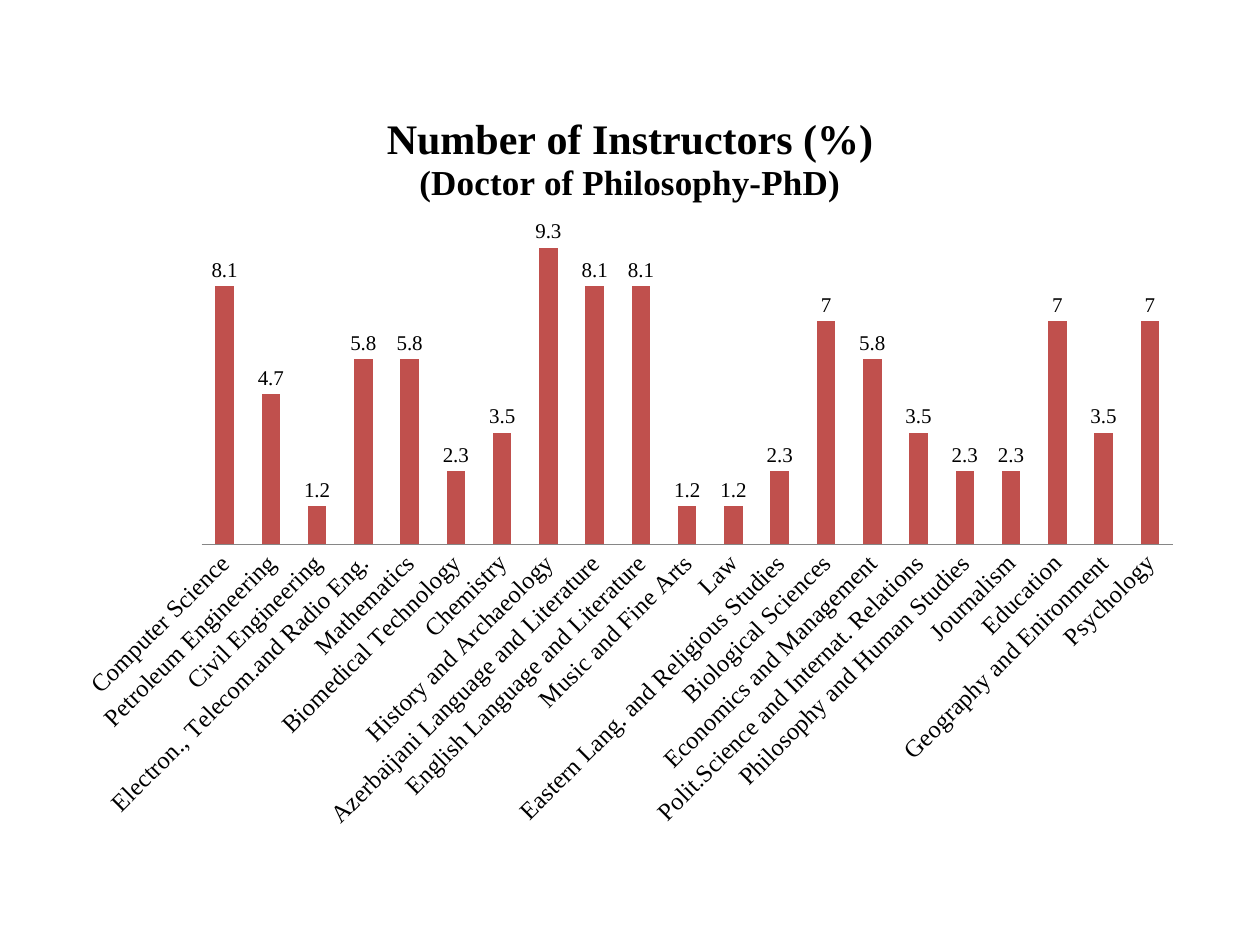
from lxml.etree import SubElement
from pptx import Presentation
from pptx.chart.data import CategoryChartData
from pptx.dml.color import RGBColor
from pptx.enum.chart import XL_CHART_TYPE as ChartType, XL_LABEL_POSITION as LabelPosition
from pptx.enum.chart import XL_TICK_MARK as TickMark
from pptx.oxml.ns import qn
from pptx.util import Inches, Pt

COLORS = {"bar": "C0504D", "text": "000000", "axis": "868686"}
SERIF = "Times New Roman"
TITLE_LINES = [("Number of Instructors (%)", 24), ("(Doctor of Philosophy-PhD)", 20)]
INSTRUCTORS = [
    ("Computer Science", 8.1),
    ("Petroleum Engineering", 4.7),
    ("Civil Engineering", 1.2),
    ("Electron., Telecom.and Radio Eng.", 5.8),
    ("Mathematics", 5.8),
    ("Biomedical Technology", 2.3),
    ("Chemistry", 3.5),
    ("History and Archaeology", 9.3),
    ("Azerbaijani Language and Literature", 8.1),
    ("English Language and Literature", 8.1),
    ("Music and Fine Arts", 1.2),
    ("Law", 1.2),
    ("Eastern Lang. and Religious Studies", 2.3),
    ("Biological Sciences", 7),
    ("Economics and Management", 5.8),
    ("Polit.Science and Internat. Relations", 3.5),
    ("Philosophy and Human Studies", 2.3),
    ("Journalism", 2.3),
    ("Education", 7),
    ("Geography and Enironment", 3.5),
    ("Psychology", 7),
]
CHART_BOX = (0.5, 0.7, 9, 6)
PLOT_BOX = (1.6, 1.79, 7.71, 2.53)


def color(key):
    return RGBColor.from_string(COLORS[key])


def style_font(font, size, name=SERIF, bold=False):
    for attribute, value in {"size": Pt(size), "name": name, "bold": bold}.items():
        setattr(font, attribute, value)
    font.color.rgb = color("text")


def place_plot(chart):
    """Fix the inner plot area as fractions of the chart frame."""
    left, top, width, height = CHART_BOX
    x, y, w, h = PLOT_BOX
    fractions = {"x": (x - left) / width, "y": (y - top) / height,
                 "w": w / width, "h": h / height}
    plot_area = chart.element.find(".//" + qn("c:plotArea"))
    layout = plot_area.find(qn("c:layout"))
    if layout is None:
        layout = SubElement(plot_area, qn("c:layout"))
        plot_area.insert(0, layout)
    manual = SubElement(layout, qn("c:manualLayout"))
    SubElement(manual, qn("c:layoutTarget")).set("val", "inner")
    for side in "xy":
        SubElement(manual, qn(f"c:{side}Mode")).set("val", "edge")
    for side, fraction in fractions.items():
        SubElement(manual, qn(f"c:{side}")).set("val", f"{fraction:.4f}")


def add_title(chart):
    frame = chart.chart_title.text_frame
    for index, (line, size) in enumerate(TITLE_LINES):
        paragraph = frame.add_paragraph() if index else frame.paragraphs[0]
        run = paragraph.add_run()
        run.text = line
        style_font(run.font, size, bold=True)


def style_axes(chart):
    departments = chart.category_axis
    departments.major_tick_mark = departments.minor_tick_mark = TickMark.NONE
    departments.format.line.color.rgb = color("axis")
    departments.format.line.width = Pt(0.75)
    style_font(departments.tick_labels.font, 14)
    category_axis = chart.element.find(".//" + qn("c:catAx"))
    category_axis.find(".//" + qn("a:bodyPr")).set("rot", "-2700000")
    percent = chart.value_axis
    percent.minimum_scale, percent.maximum_scale = 0, 10
    percent.has_major_gridlines = False
    percent.visible = False


def style_bars(plot):
    plot.gap_width, plot.overlap = 150, -25
    plot.vary_by_categories = False
    bars = plot.series[0]
    bars.format.fill.solid()
    bars.format.fill.fore_color.rgb = color("bar")
    labels = bars.data_labels
    labels.show_value = True
    labels.position = LabelPosition.OUTSIDE_END
    style_font(labels.font, 12)


def main():
    deck = Presentation()
    deck.slide_width, deck.slide_height = Inches(10), Inches(7.5)
    slide = deck.slides.add_slide(deck.slide_layouts[6])
    departments, shares = zip(*INSTRUCTORS)
    data = CategoryChartData()
    data.categories = departments
    data.add_series("Series 1", shares)
    chart = slide.shapes.add_chart(
        ChartType.COLUMN_CLUSTERED, *map(Inches, CHART_BOX), data).chart
    chart.has_legend = False
    style_font(chart.font, 10, "Calibri")
    add_title(chart)
    style_axes(chart)
    style_bars(chart.plots[0])
    place_plot(chart)
    deck.save("out.pptx")


if __name__ == "__main__":
    main()
